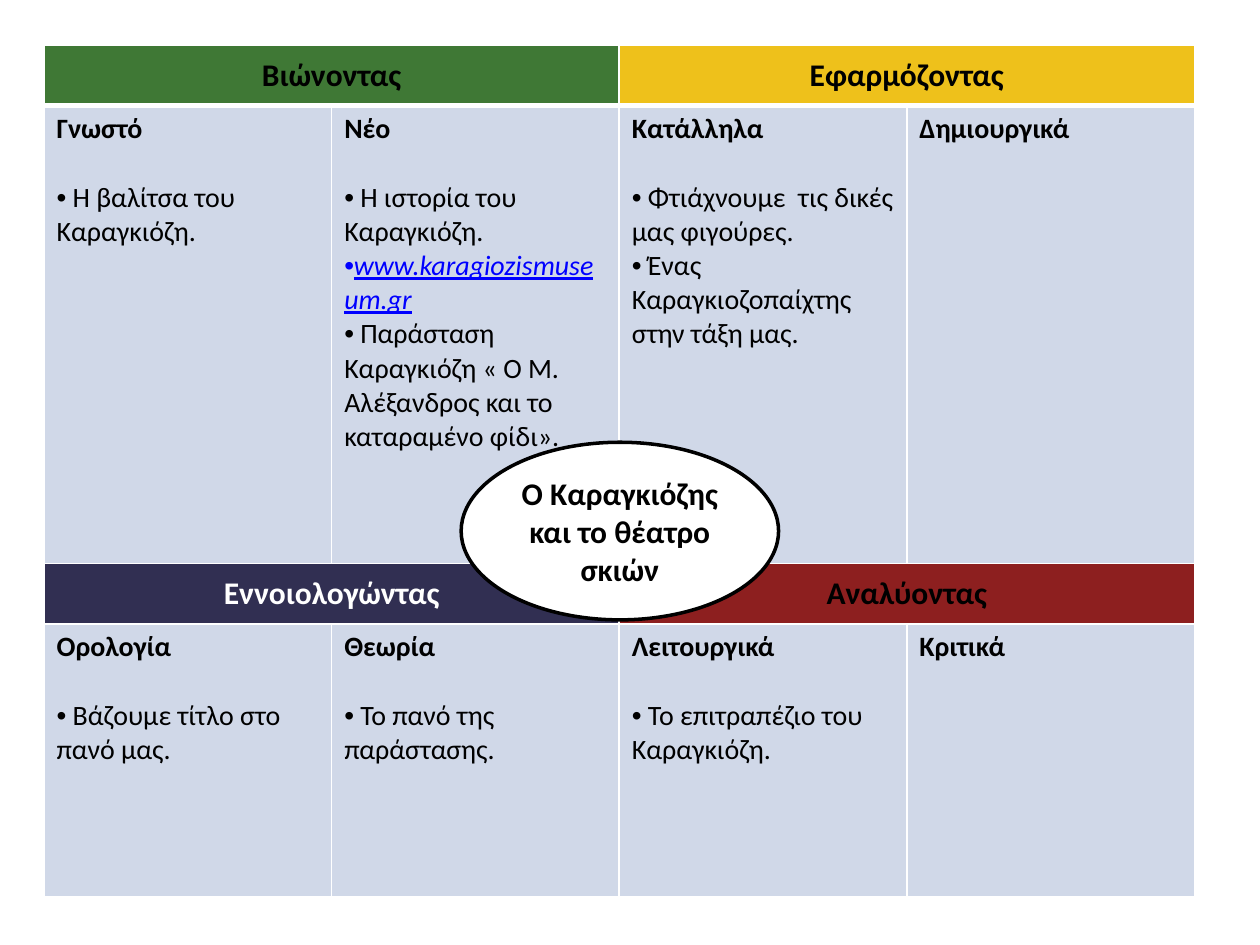
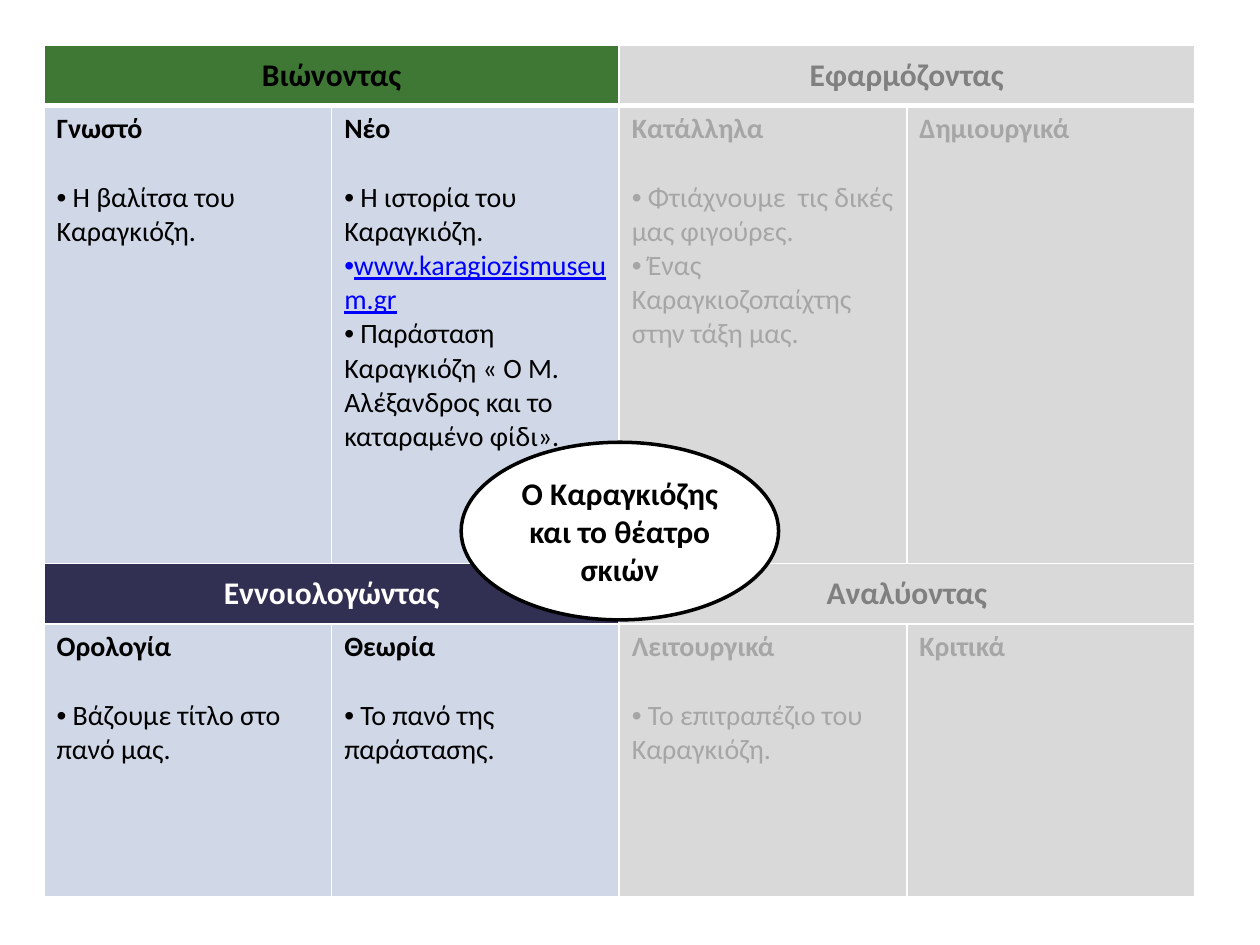
from collections import namedtuple

from lxml import etree
from pptx import Presentation
from pptx import util as u
from pptx.dml import color
from pptx.enum import shapes, text
from pptx.oxml import ns

Box = namedtuple("Box", "left top width height")
Quadrant = namedtuple("Quadrant", "title fill ink alpha columns")

COLORS = {
    "black": "000000",
    "white": "FFFFFF",
    "green": "3F7835",
    "yellow": "EEC11B",
    "navy": "18163D",
    "red": "8D1F1F",
    "panel": "D0D8E8",
    "link": "0000FF",
    "muted_fill": "D9D9D9",
    "muted_title": "808080",
    "muted_text": "A6A6A6",
}
FONT = "Calibri"
TITLE_FORMAT = {"name": FONT, "size": u.Pt(18), "bold": True}
HEADING_FORMAT = {"name": FONT, "size": u.Pt(16), "bold": True}
ITEM_FORMAT = {"name": FONT, "size": u.Pt(16), "bold": False}

GRID_BOX = Box(25.2, 25.92, 657.4, 486.6)
OVAL_BOX = Box(263.5, 252.7, 181.4, 101.5)
ROW_SHARES = [34.5, 261.5, 34.6, 156]
HEADING_GAP = 19.5
TOPIC = "Ο Καραγκιόζης και το θέατρο σκιών"
MUSEUM = "www.karagiozismuseum.gr"

QUADRANTS = [
    Quadrant("Βιώνοντας", "green", "black", 100, [
        ("Γνωστό", [" Η βαλίτσα του Καραγκιόζη."]),
        ("Νέο", [
            " Η ιστορία του Καραγκιόζη.",
            MUSEUM,
            " Παράσταση Καραγκιόζη « Ο Μ.  Αλέξανδρος και το καταραμένο φίδι».",
        ]),
    ]),
    Quadrant("Εφαρμόζοντας", "yellow", "black", 100, [
        ("Κατάλληλα", [
            " Φτιάχνουμε  τις δικές μας φιγούρες.",
            " Ένας Καραγκιοζοπαίχτης στην τάξη μας.",
        ]),
        ("Δημιουργικά", []),
    ]),
    Quadrant("Εννοιολογώντας", "navy", "white", 89, [
        ("Ορολογία", [" Βάζουμε τίτλο στο πανό μας."]),
        ("Θεωρία", [" Το πανό της παράστασης."]),
    ]),
    Quadrant("Αναλύοντας", "red", "black", 100, [
        ("Λειτουργικά", [" Το επιτραπέζιο του Καραγκιόζη."]),
        ("Κριτικά", []),
    ]),
]


def rgb(name):
    return color.RGBColor.from_string(COLORS[name])


def points(box):
    return [u.Pt(value) for value in box]


def write_span(para, words, ink, values):
    span = para.add_run()
    span.text = words
    for name, value in values.items():
        setattr(span.font, name, value)
    span.font.color.rgb = rgb(ink)


def add_bullet(para):
    props = para._p.get_or_add_pPr()
    props.set("marL", "0")
    props.set("indent", "0")
    etree.SubElement(props, ns.qn("a:buFont"), typeface="Arial")
    etree.SubElement(props, ns.qn("a:buChar"), char="•")


def fill_cell(cell, fill, alpha=100):
    cell.fill.solid()
    cell.fill.fore_color.rgb = rgb(fill)
    if alpha < 100:
        tint = cell._tc.tcPr.find(".//" + ns.qn("a:srgbClr"))
        etree.SubElement(tint, ns.qn("a:alpha"), val=str(alpha * 1000))


def add_borders(cell, row):
    widths = {"L": 1, "R": 1, "T": 3 if row == 1 else 1, "B": 3 if row == 0 else 1}
    for position, (side, width) in enumerate(widths.items()):
        line = etree.Element(ns.qn("a:ln" + side), w=str(u.Pt(width)))
        solid = etree.SubElement(line, ns.qn("a:solidFill"))
        etree.SubElement(solid, ns.qn("a:srgbClr"), val=COLORS["white"])
        cell._tc.get_or_add_tcPr().insert(position, line)


def write_title(cell, words, ink):
    cell.vertical_anchor = text.MSO_ANCHOR.MIDDLE
    para = cell.text_frame.paragraphs[0]
    para.alignment = text.PP_ALIGN.CENTER
    write_span(para, words, ink, TITLE_FORMAT)


def write_items(cell, heading, items, ink, link_italic):
    frame = cell.text_frame
    write_span(frame.paragraphs[0], heading, ink, HEADING_FORMAT)
    for number, item in enumerate(items):
        para = frame.add_paragraph()
        if number == 0:
            para.space_before = u.Pt(HEADING_GAP)
        add_bullet(para)
        if item == MUSEUM:
            link_format = {**ITEM_FORMAT, "underline": True, "italic": link_italic}
            write_span(para, item, "link", link_format)
        else:
            write_span(para, item, ink, ITEM_FORMAT)


def add_quadrant(table, quadrant, row, column, muted, link_italic):
    fill = "muted_fill" if muted else quadrant.fill
    title_cell = table.cell(row, column)
    title_cell.merge(table.cell(row, column + 1))
    write_title(title_cell, quadrant.title, "muted_title" if muted else quadrant.ink)
    for offset, (heading, items) in enumerate(quadrant.columns):
        fill_cell(table.cell(row, column + offset), fill, quadrant.alpha)
        cell = table.cell(row + 1, column + offset)
        fill_cell(cell, "muted_fill" if muted else "panel")
        write_items(cell, heading, items, "muted_text" if muted else "black", link_italic)


def add_grid(page, box, mute_right, link_italic):
    table = page.shapes.add_table(4, 4, *points(box)).table
    table.first_row = False
    table.horz_banding = False
    for column in table.columns:
        column.width = u.Pt(box.width / 4)
    for row, share in zip(table.rows, ROW_SHARES):
        row.height = u.Pt(box.height * share / sum(ROW_SHARES))
    for number, quadrant in enumerate(QUADRANTS):
        band, side = divmod(number, 2)
        muted = mute_right and side == 1
        add_quadrant(table, quadrant, band * 2, side * 2, muted, link_italic)
    for row in range(4):
        for column in range(4):
            add_borders(table.cell(row, column), row)


def add_topic(page, box):
    oval = page.shapes.add_shape(shapes.MSO_SHAPE.OVAL, *points(box))
    oval.shadow.inherit = False
    oval.fill.solid()
    oval.fill.fore_color.rgb = rgb("white")
    oval.line.color.rgb = rgb("black")
    oval.line.width = u.Pt(2)
    frame = oval.text_frame
    frame.word_wrap = True
    frame.vertical_anchor = text.MSO_ANCHOR.MIDDLE
    para = frame.paragraphs[0]
    para.alignment = text.PP_ALIGN.CENTER
    write_span(para, TOPIC, "black", TITLE_FORMAT)


def add_plan(deck, mute_right, link_italic):
    page = deck.slides.add_slide(deck.slide_layouts[6])
    add_grid(page, GRID_BOX, mute_right, link_italic)
    add_topic(page, OVAL_BOX)


def main():
    deck = Presentation()
    deck.slide_width, deck.slide_height = u.Pt(720), u.Pt(540)
    add_plan(deck, mute_right=False, link_italic=True)
    add_plan(deck, mute_right=True, link_italic=False)
    deck.save("out.pptx")


if __name__ == "__main__":
    main()
